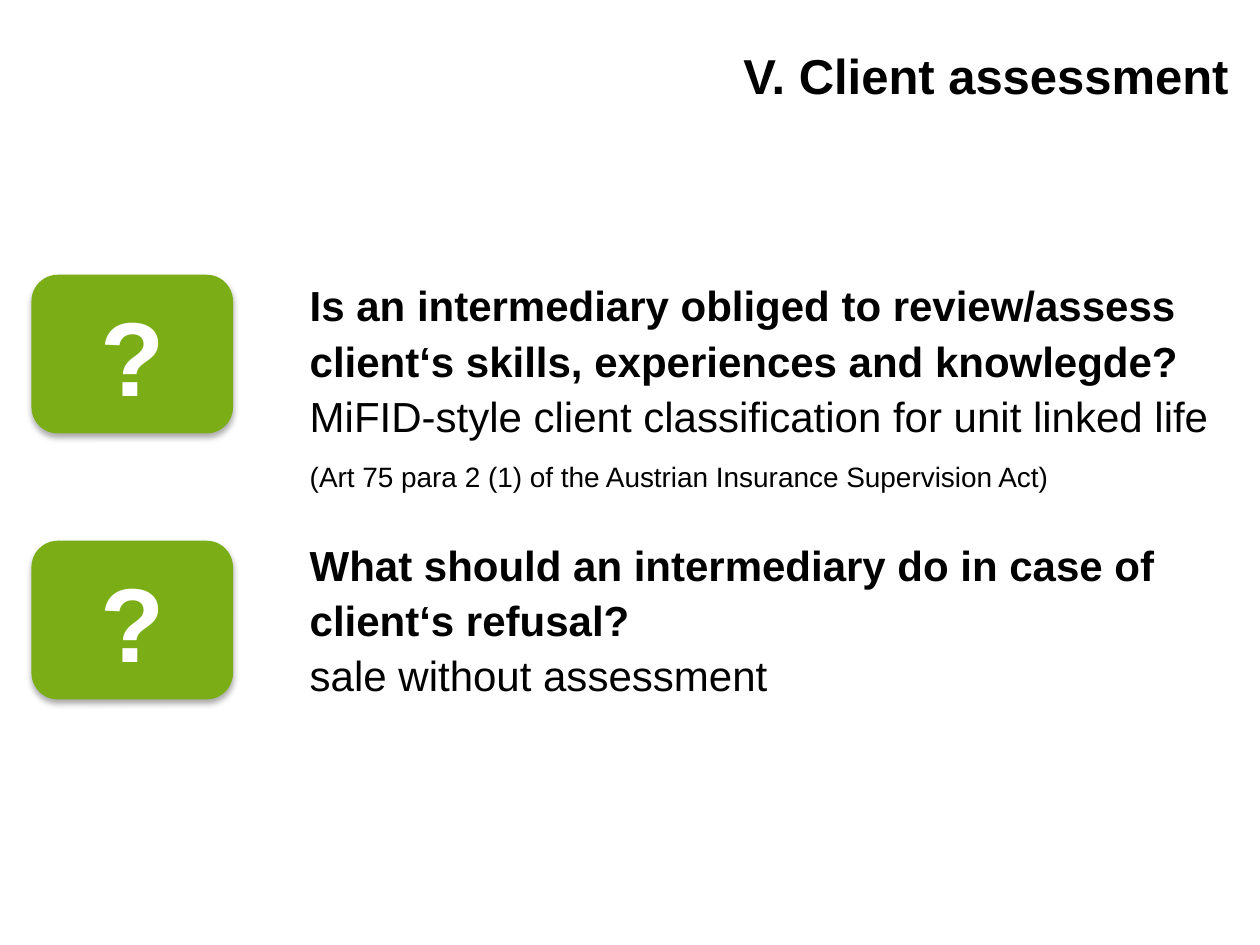
"""Build the client assessment slide with two questions and their answers."""
from lxml.etree import SubElement
from pptx import Presentation
from pptx.dml.color import RGBColor
from pptx.enum.shapes import MSO_SHAPE
from pptx.enum.text import MSO_ANCHOR as ANCHOR, MSO_AUTO_SIZE as AUTO, PP_ALIGN as ALIGN
from pptx.oxml import parse_xml
from pptx.oxml.ns import nsdecls, qn
from pptx.util import Pt

BLACK = RGBColor(0x00, 0x00, 0x00)
WHITE = RGBColor(0xFF, 0xFF, 0xFF)
GREEN = RGBColor(0x7B, 0xAE, 0x16)

TITLE = "V. Client assessment"
QUESTION = dict(size=24, bold=True, line=31.6)
ANSWER = dict(size=24, line=31.6)
SOURCE = dict(size=16, line=30)
BODY = [
    ("Is an intermediary obliged to review/assess client‘s skills, experiences and knowlegde?", QUESTION),
    ("MiFID-style client classification for unit linked life", ANSWER),
    ("(Art 75 para 2 (1) of the Austrian Insurance Supervision Act)", SOURCE),
    ("What should an intermediary do in case of client‘s refusal?", dict(QUESTION, before=23.4)),
    ("sale without assessment", ANSWER),
]

BOX_LEFT, BOX_TOP, BOX_W, BOX_H, BOX_STEP = 18, 157, 115.2, 90.7, 152
BOX_COUNT = 2
SHADOW = (
    f'<a:effectLst {nsdecls("a")}><a:outerShdw blurRad="{Pt(3.5)}" dist="{Pt(2.2)}" '
    'dir="5400000" rotWithShape="0"><a:srgbClr val="000000"><a:alpha val="32000"/>'
    '</a:srgbClr></a:outerShdw></a:effectLst>'
)


def write(p, text, size, bold=False, color=BLACK, align=ALIGN.LEFT, line=None, before=0):
    pPr = p._p.get_or_add_pPr()
    pPr.set("marL", "0")
    pPr.set("indent", "0")
    SubElement(pPr, qn("a:buNone"))
    p.alignment = align
    p.space_before = Pt(before)
    p.space_after = Pt(0)
    if line:
        p.line_spacing = Pt(line)
    r = p.add_run()
    r.text = text
    r.font.name = "Arial"
    r.font.size = Pt(size)
    r.font.bold = bold
    r.font.color.rgb = color


def place(sp, left, top, width, height, anchor):
    sp.left, sp.top, sp.width, sp.height = Pt(left), Pt(top), Pt(width), Pt(height)
    tf = sp.text_frame
    tf.margin_left = tf.margin_right = tf.margin_top = tf.margin_bottom = 0
    tf.word_wrap = True
    tf.auto_size = AUTO.NONE
    tf.vertical_anchor = anchor
    return tf


def main():
    prs = Presentation()
    prs.slide_width, prs.slide_height = Pt(720), Pt(540)
    s = prs.slides.add_slide(prs.slide_layouts[1])

    tf = place(s.shapes.title, 88, 26, 614, 34, ANCHOR.MIDDLE)
    write(tf.paragraphs[0], TITLE, 28, bold=True, align=ALIGN.RIGHT)

    tf = place(s.placeholders[1], 177, BOX_TOP, 543, 323, ANCHOR.TOP)
    for i, (text, style) in enumerate(BODY):
        p = tf.add_paragraph() if i else tf.paragraphs[0]
        write(p, text, **style)

    for i in range(BOX_COUNT):
        sp = s.shapes.add_shape(MSO_SHAPE.ROUNDED_RECTANGLE, Pt(BOX_LEFT),
                                Pt(BOX_TOP + i * BOX_STEP), Pt(BOX_W), Pt(BOX_H))
        sp.fill.solid()
        sp.fill.fore_color.rgb = GREEN
        sp.line.fill.background()
        sp._element.spPr.append(parse_xml(SHADOW))
        sp.text_frame.vertical_anchor = ANCHOR.MIDDLE
        write(sp.text_frame.paragraphs[0], "?", 60, bold=True, color=WHITE, align=ALIGN.CENTER)

    prs.save("out.pptx")


if __name__ == "__main__":
    main()
